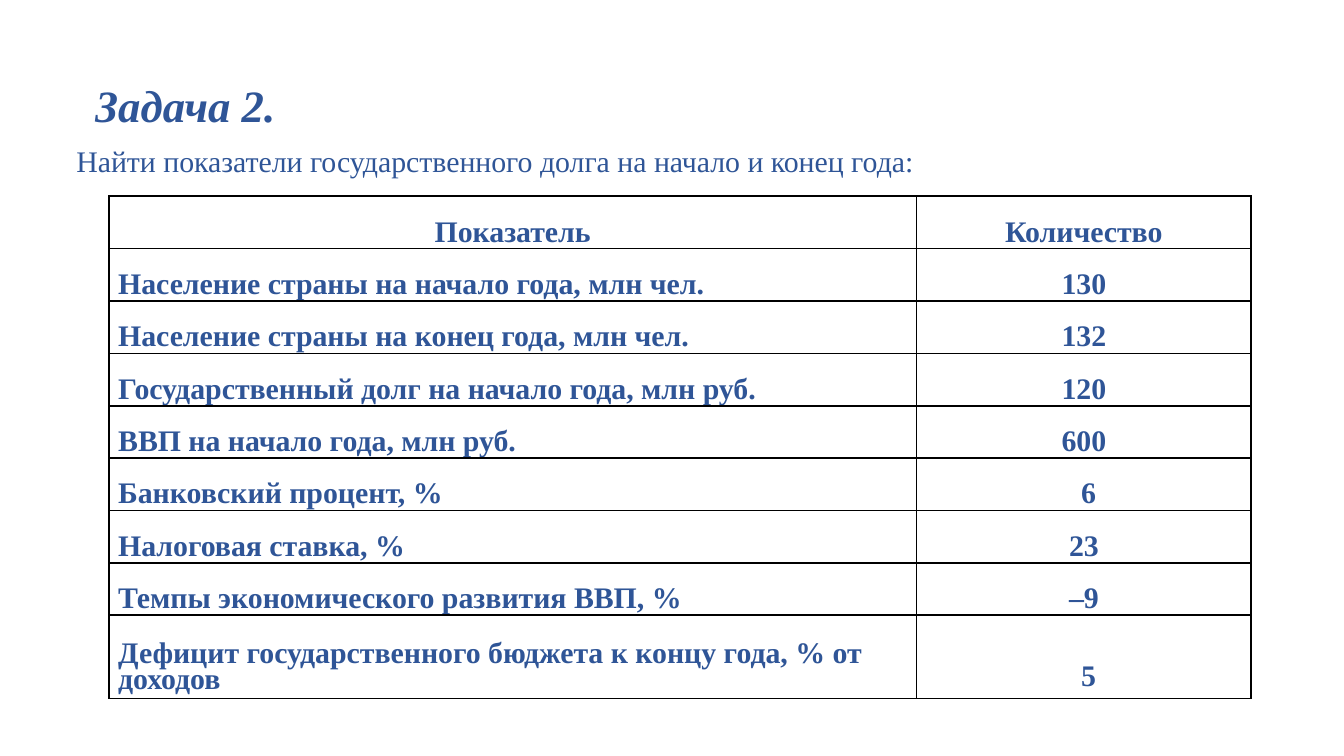
from lxml.etree import SubElement
from pptx import Presentation
from pptx.dml.color import RGBColor
from pptx.enum.text import MSO_ANCHOR as Anchor, PP_ALIGN as Align
from pptx.oxml.ns import qn
from pptx.util import Inches, Pt

# Content
TITLE = "Задача 2."
INTRO = "Найти показатели государственного долга на начало и конец года:"
ROWS = [
    ("Показатель", "Количество"),
    ("Население страны на начало года, млн чел.", "130"),
    ("Население страны на конец года, млн чел.", "132"),
    ("Государственный долг на начало года, млн руб.", "120"),
    ("ВВП на начало года, млн руб.", "600"),
    ("Банковский процент, %", "6"),
    ("Налоговая ставка, %", "23"),
    ("Темпы экономического развития ВВП, %", "–9"),
    ("Дефицит государственного бюджета к концу года, % от\nдоходов", "5"),
]

# Style
FONT = "Times New Roman"
BLUE = RGBColor(0x2F, 0x55, 0x97)
BLACK = RGBColor(0x00, 0x00, 0x00)
COLUMN_WIDTHS = (6.01, 2.49)
ROW_HEIGHT, LAST_HEIGHT = 0.39, 0.62
INDENT = 0.07
SHIFTED_VALUES = ("6", "5")  # centred with a left indent
LAST_BOTTOM_MARGINS = (0.02, 0.04)


def add_text(paragraph, text, size, bold=False, italic=False):
    run = paragraph.add_run()
    run.text = text
    font = run.font
    font.name, font.size, font.bold, font.italic = FONT, Pt(size), bold, italic
    font.color.rgb = BLUE


def add_borders(cell):
    properties = cell._tc.get_or_add_tcPr()
    for position, side in enumerate(("lnL", "lnR", "lnT", "lnB")):
        line = properties.makeelement(qn(f"a:{side}"), {"w": str(Pt(1))})
        fill = SubElement(line, qn("a:solidFill"))
        SubElement(fill, qn("a:srgbClr"), val=str(BLACK))
        properties.insert(position, line)


def fill_cell(cell, text, centred, bottom):
    cell.fill.background()
    add_borders(cell)
    cell.vertical_anchor = Anchor.BOTTOM
    cell.margin_right = cell.margin_top = 0
    indented = not centred or text in SHIFTED_VALUES
    cell.margin_left = Inches(INDENT if indented else 0)
    cell.margin_bottom = Inches(bottom)
    frame = cell.text_frame
    for number, line in enumerate(text.split("\n")):
        paragraph = frame.add_paragraph() if number else frame.paragraphs[0]
        paragraph.alignment = Align.CENTER if centred else Align.LEFT
        paragraph.line_spacing = Pt(14)
        add_text(paragraph, line, 16, bold=True)


# Widescreen slide, 16:9
presentation = Presentation()
presentation.slide_width = Inches(10)
presentation.slide_height = Inches(10) * 9 // 16
slide = presentation.slides.add_slide(presentation.slide_layouts[5])

# Title
title = slide.shapes.title
title.left, title.top = Inches(0.61), Inches(0.53)
title.width, title.height = Inches(1.55), Inches(0.5)
title.text_frame.word_wrap = False
title.text_frame.vertical_anchor = Anchor.TOP
title_paragraph = title.text_frame.paragraphs[0]
title_paragraph.alignment = Align.LEFT
add_text(title_paragraph, TITLE, 24, bold=True, italic=True)

# Task statement
intro = slide.shapes.add_textbox(Inches(0.47), Inches(1.01), Inches(9.2), Inches(0.64))
intro.text_frame.word_wrap = True
add_text(intro.text_frame.paragraphs[0], INTRO, 16)

# Table of indicators
heights = [ROW_HEIGHT] * (len(ROWS) - 1) + [LAST_HEIGHT]
table = slide.shapes.add_table(
    len(ROWS), len(COLUMN_WIDTHS), Inches(0.81), Inches(1.46),
    Inches(sum(COLUMN_WIDTHS)), Inches(sum(heights))).table
table.first_row = table.horz_banding = False
for column, width in zip(table.columns, COLUMN_WIDTHS):
    column.width = Inches(width)
for row_number, (texts, height) in enumerate(zip(ROWS, heights)):
    table.rows[row_number].height = Inches(height)
    is_last = row_number == len(ROWS) - 1
    for column_number, text in enumerate(texts):
        centred = row_number == 0 or column_number == 1
        bottom = LAST_BOTTOM_MARGINS[column_number] if is_last else 0
        fill_cell(table.cell(row_number, column_number), text, centred, bottom)

presentation.save("out.pptx")
